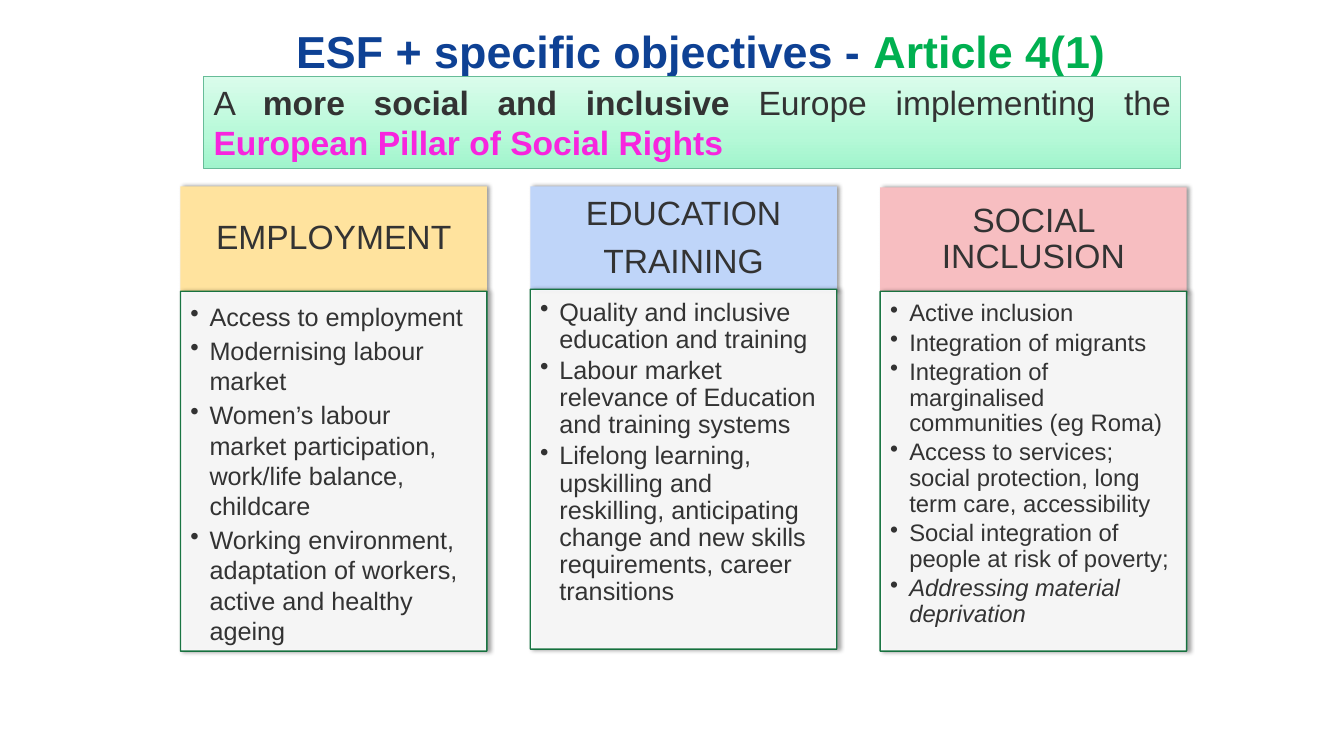
from pptx import Presentation
from pptx.dml.color import RGBColor
from pptx.enum.shapes import MSO_SHAPE
from pptx.enum.text import MSO_ANCHOR as ANCHOR, PP_ALIGN as ALIGN
from pptx.oxml.ns import qn
from pptx.util import Pt
from lxml.etree import SubElement

PX = 9144  # 100 px to the inch
FONT = "Arial"
NAVY = RGBColor(0x0E, 0x41, 0x94)
GREEN = RGBColor(0x00, 0xB0, 0x50)
DARK_GREEN = RGBColor(0x03, 0x68, 0x30)
MINT_LINE = RGBColor(0x67, 0xBC, 0x98)
MINT_STOPS = [(0, RGBColor(0xA0, 0xF4, 0xCC)), (35, RGBColor(0xB6, 0xF9, 0xD8)),
              (100, RGBColor(0xDA, 0xFC, 0xEB))]
MAGENTA = RGBColor(0xF7, 0x25, 0xDE)
INK = RGBColor(0x33, 0x33, 0x33)
WHITE = RGBColor(0xFF, 0xFF, 0xFF)
YELLOW = RGBColor(0xFF, 0xE3, 0x9E)
BLUE = RGBColor(0xBF, 0xD5, 0xF9)
PINK = RGBColor(0xF7, 0xBE, 0xC1)

# Runs: text, colour, bold
TITLE = [("ESF + specific objectives - ", NAVY, True), ("Article 4(1)", GREEN, True)]
BANNER = [("A ", INK, False), ("more social and inclusive ", INK, True),
          ("Europe implementing the ", INK, False),
          ("European Pillar of Social Rights", MAGENTA, True)]
OBJECTIVES = [
    dict(heading=["EMPLOYMENT"], color=YELLOW, top=185, body_top=289, size=18, spacing=1.0,
         items=["Access to employment", "Modernising labour market",
                "Women’s labour market participation, work/life balance, childcare",
                "Working environment, adaptation of workers, active and healthy ageing"]),
    dict(heading=["EDUCATION", "TRAINING"], color=BLUE, top=185, body_top=287, size=18,
         spacing=0.9,
         items=["Quality and inclusive education and training",
                "Labour market relevance of Education and training systems",
                "Lifelong learning, upskilling and reskilling, anticipating change "
                "and new skills requirements, career transitions"]),
    dict(heading=["SOCIAL INCLUSION"], color=PINK, top=186, body_top=289, size=17, spacing=0.9,
         items=["Active inclusion", "Integration of migrants",
                "Integration of marginalised communities (eg Roma)",
                "Access to services; social protection, long term care, accessibility",
                "Social integration of people at risk of poverty;",
                "Addressing material deprivation"]),
]
ITALIC_ITEM = "Addressing material deprivation"
COLUMN_LEFT, COLUMN_PITCH, COLUMN_WIDTH = 179, 347, 304
HEADING_HEIGHT, BODY_HEIGHT = 104, 357
BULLET_INDENT = 19

deck = Presentation()
deck.slide_width, deck.slide_height = 1333 * PX, 750 * PX
slide = deck.slides.add_slide(deck.slide_layouts[6])


def set_frame(shape, anchor, insets):
    frame = shape.text_frame
    frame.word_wrap = True
    frame.vertical_anchor = anchor
    (frame.margin_left, frame.margin_top,
     frame.margin_right, frame.margin_bottom) = [inset * PX for inset in insets]
    return frame


def add_run(paragraph, text, size, color=INK, bold=False, italic=False):
    run = paragraph.add_run()
    run.text = text
    font = run.font
    font.name, font.size, font.bold, font.italic = FONT, Pt(size), bold, italic
    font.color.rgb = color


def add_rect(left, top, width, height):
    rect = slide.shapes.add_shape(MSO_SHAPE.RECTANGLE, left * PX, top * PX,
                                  width * PX, height * PX)
    rect.shadow.inherit = False
    return rect


def add_soft_shadow(shape):
    effects = shape._element.spPr.find(qn("a:effectLst"))
    shadow = SubElement(effects, qn("a:outerShdw"), blurRad="40000", dist="23000",
                        dir="0", rotWithShape="0")
    black = SubElement(shadow, qn("a:srgbClr"), val="000000")
    SubElement(black, qn("a:alpha"), val="40000")


def fill_paragraphs(frame, texts, size, spacing, after):
    """Write one paragraph per text and yield each for further formatting."""
    for index, text in enumerate(texts):
        paragraph = frame.add_paragraph() if index else frame.paragraphs[0]
        paragraph.line_spacing = spacing
        paragraph.space_after = Pt(round(size * after, 1))
        add_run(paragraph, text, size, italic=text == ITALIC_ITEM)
        yield paragraph


def add_bullet(paragraph):
    props = paragraph._p.get_or_add_pPr()
    props.set("marL", str(BULLET_INDENT * PX))
    props.set("indent", str(-BULLET_INDENT * PX))
    SubElement(props, qn("a:buChar"), char="•")


def add_objective(left, objective):
    heading = add_rect(left, objective["top"], COLUMN_WIDTH, HEADING_HEIGHT)
    heading.fill.solid()
    heading.fill.fore_color.rgb = objective["color"]
    heading.line.fill.background()
    add_soft_shadow(heading)
    frame = set_frame(heading, ANCHOR.MIDDLE, (19, 11, 19, 11))
    for paragraph in fill_paragraphs(frame, objective["heading"], 24, 0.9, 0.35):
        paragraph.alignment = ALIGN.CENTER

    body = add_rect(left, objective["body_top"], COLUMN_WIDTH, BODY_HEIGHT)
    body.fill.solid()
    body.fill.fore_color.rgb = WHITE
    body.line.color.rgb = DARK_GREEN
    body.line.width = Pt(1)
    for color in body._element.spPr.iter(qn("a:srgbClr")):
        SubElement(color, qn("a:alpha"), val="90000")
    add_soft_shadow(body)
    frame = set_frame(body, ANCHOR.TOP, (10, 10, 14, 16))
    for paragraph in fill_paragraphs(frame, objective["items"], objective["size"],
                                     objective["spacing"], 0.15):
        paragraph.alignment = ALIGN.LEFT
        add_bullet(paragraph)


title = slide.shapes.add_textbox(273 * PX, 16 * PX, 844 * PX, 68 * PX)
title_line = set_frame(title, ANCHOR.MIDDLE, (10, 5, 10, 5)).paragraphs[0]
title_line.alignment = ALIGN.CENTER
for text, color, bold in TITLE:
    add_run(title_line, text, 32, color, bold)

for column, objective in enumerate(OBJECTIVES):
    add_objective(COLUMN_LEFT + column * COLUMN_PITCH, objective)

banner = add_rect(202, 76, 969, 91)
banner.fill.gradient()
banner.fill.gradient_angle = 90
stops = banner._element.spPr.find(".//" + qn("a:gsLst"))
stops.clear()
for percent, color in MINT_STOPS:
    stop = SubElement(stops, qn("a:gs"), pos=str(percent * 1000))
    SubElement(stop, qn("a:srgbClr"), val=str(color))
banner.line.color.rgb = MINT_LINE
banner.line.width = Pt(1)
banner_line = set_frame(banner, ANCHOR.TOP, (10, 5, 10, 5)).paragraphs[0]
banner_line.alignment = ALIGN.JUSTIFY
for text, color, bold in BANNER:
    add_run(banner_line, text, 24, color, bold)

deck.save("out.pptx")
